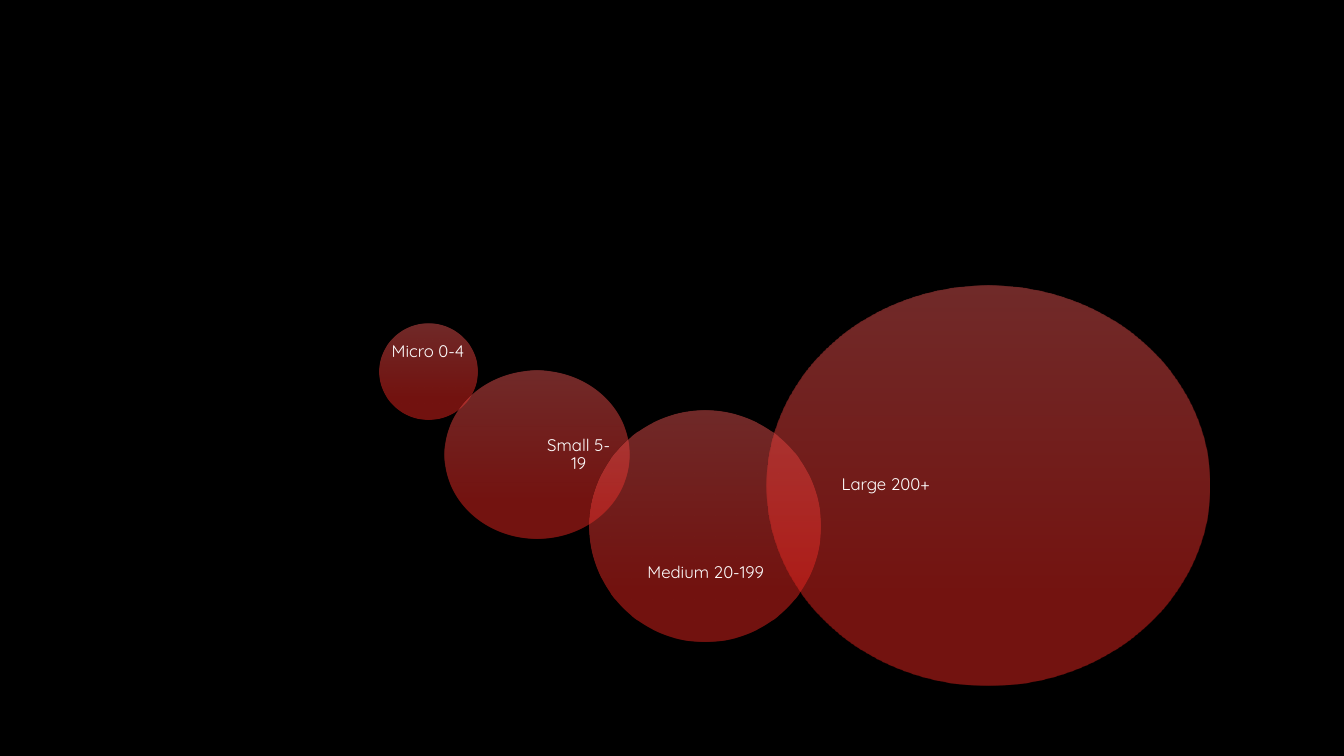
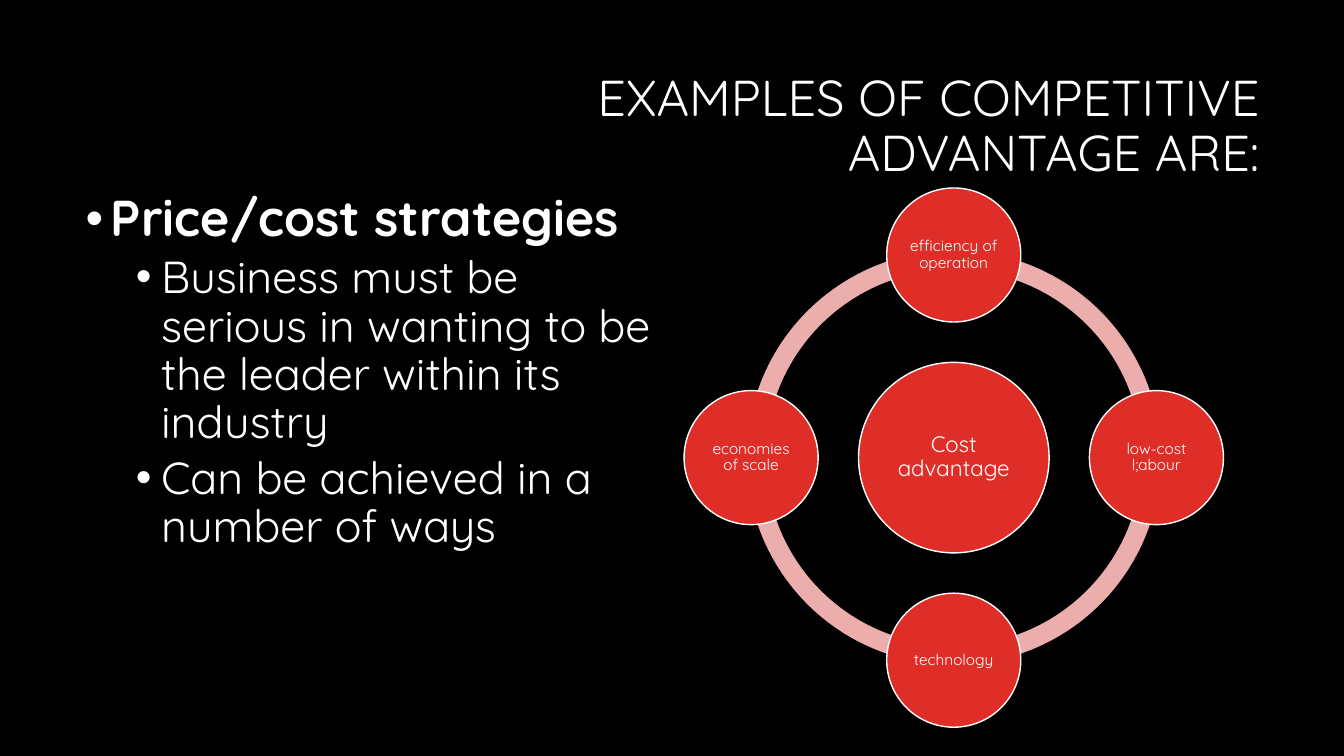
from dataclasses import dataclass
from math import cos, radians, sin

from lxml.etree import SubElement
from pptx import Presentation
from pptx.dml.color import RGBColor
from pptx.enum.shapes import MSO_SHAPE as Preset
from pptx.enum.text import MSO_ANCHOR as Anchor, PP_ALIGN as Align
from pptx.oxml.ns import qn
from pptx.shapes.autoshape import Shape
from pptx.slide import Slide
from pptx.text.text import TextFrame, _Paragraph as Paragraph
from pptx.util import Inches, Pt

FONT = "Quicksand"
COLORS = {
    "background": "000000",
    "text": "FFFFFF",
    "bubble_top": "E25452",
    "bubble_bottom": "E8251F",
    "node": "DF2E28",
    "ring": "ECADAD",
}


@dataclass(frozen=True)
class Box:
    left: float
    top: float
    width: float
    height: float

    def lengths(self) -> tuple:
        return tuple(Inches(v) for v in (self.left, self.top, self.width, self.height))


@dataclass(frozen=True)
class Bubble:
    label: str
    circle: Box
    label_box: Box


@dataclass(frozen=True)
class Bullet:
    text: str
    size: int
    level: int = 0
    bold: bool = False


BUBBLES = [
    Bubble("Micro 0-4", Box(3.76, 3.21, 0.98, 0.95), Box(3.87, 3.34, 0.75, 0.3)),
    Bubble("Small 5-19", Box(4.41, 3.68, 1.83, 1.66), Box(5.39, 3.88, 0.7, 1.27)),
    Bubble("Medium 20-199", Box(5.85, 4.07, 2.29, 2.29), Box(6.12, 5.32, 1.76, 0.73)),
    Bubble("Large 200+", Box(7.6, 2.83, 4.4, 3.97), Box(7.94, 3.29, 1.69, 3.05)),
]
BULLETS = [
    Bullet("Price/cost strategies", 36, bold=True),
    Bullet("Business must be serious in wanting to be the leader within its industry", 32, 1),
    Bullet("Can be achieved in a number of ways", 32, 1),
]
# Clockwise from the top
COST_SOURCES = ["efficiency of operation", "low-cost l;abour", "technology", "economies of scale"]
HUB_X, HUB_Y = 9.46, 4.54
HUB_SIZE, NODE_SIZE, RING_SIZE = 1.89, 1.33, 4.11
ORBIT = 2.01
RING_THICKNESS = 0.046
QUARTER_TURN = 54  # 90 degrees in block arc adjustment units


def color(name: str) -> RGBColor:
    return RGBColor.from_string(COLORS[name])


def add_slide(deck) -> Slide:
    slide = deck.slides.add_slide(deck.slide_layouts[6])
    slide.background.fill.solid()
    slide.background.fill.fore_color.rgb = color("background")
    return slide


def style(paragraph: Paragraph, size: int, align: Align, bold: bool = False) -> None:
    paragraph.alignment = align
    paragraph.line_spacing = 0.9
    font = paragraph.font
    font.name, font.size, font.bold = FONT, Pt(size), bold
    font.color.rgb = color("text")


def write(frame: TextFrame, text: str, size: int, inset: float, align: Align = Align.CENTER) -> None:
    frame.word_wrap = True
    frame.vertical_anchor = Anchor.MIDDLE
    frame.margin_left = frame.margin_right = Inches(inset)
    frame.margin_top = frame.margin_bottom = Inches(inset)
    paragraph = frame.paragraphs[0]
    paragraph.text = text
    style(paragraph, size, align)


def add_plain(slide: Slide, preset: Preset, box: Box) -> Shape:
    shape = slide.shapes.add_shape(preset, *box.lengths())
    shape.shadow.inherit = False
    shape.line.fill.background()
    return shape


def centered(x: float, y: float, size: float) -> Box:
    return Box(x - size / 2, y - size / 2, size, size)


def add_bubble(slide: Slide, bubble: Bubble) -> None:
    circle = add_plain(slide, Preset.OVAL, bubble.circle)
    circle.fill.gradient()
    circle.fill.gradient_angle = 270  # top to bottom
    stops = zip(circle.fill.gradient_stops, ("bubble_top", "bubble_bottom"), (0, 0.78))
    for stop, name, position in stops:
        stop.color.rgb = color(name)
        stop.position = position
    for tint in circle.element.spPr.iter(qn("a:srgbClr")):
        SubElement(tint, qn("a:alpha"), val="50000")
    label = slide.shapes.add_textbox(*bubble.label_box.lengths())
    write(label.text_frame, bubble.label, 12, 0)


def add_ring_quarter(slide: Slide, quarter: int) -> None:
    arc = add_plain(slide, Preset.BLOCK_ARC, centered(HUB_X, HUB_Y, RING_SIZE))
    arc.fill.solid()
    arc.fill.fore_color.rgb = color("ring")
    arc.adjustments[0] = quarter * QUARTER_TURN
    arc.adjustments[1] = (quarter + 1) % 4 * QUARTER_TURN
    arc.adjustments[2] = RING_THICKNESS


def add_node(slide: Slide, text: str, x: float, y: float, diameter: float, size: int) -> None:
    node = add_plain(slide, Preset.OVAL, centered(x, y, diameter))
    node.fill.solid()
    node.fill.fore_color.rgb = color("node")
    node.line.color.rgb = color("text")
    node.line.width = Pt(1)
    write(node.text_frame, text, size, 0.02)


def add_title(slide: Slide, text: str) -> None:
    title = slide.shapes.add_textbox(*Box(3.17, 0.56, 9.42, 1.41).lengths())
    write(title.text_frame, text, 36, 0.1, Align.RIGHT)


def add_bullets(slide: Slide, bullets: list[Bullet]) -> None:
    frame = slide.shapes.add_textbox(*Box(0.75, 1.87, 5.96, 4.4).lengths()).text_frame
    frame.word_wrap = True
    for index, bullet in enumerate(bullets):
        paragraph = frame.add_paragraph() if index else frame.paragraphs[0]
        paragraph.text = bullet.text
        paragraph.level = bullet.level
        properties = paragraph._p.get_or_add_pPr()
        properties.set("marL", str(Inches(0.25 + 0.5 * bullet.level)))
        properties.set("indent", str(Inches(-0.25)))
        SubElement(properties, qn("a:buFont"), typeface="Arial")
        SubElement(properties, qn("a:buChar"), char="•")
        style(paragraph, bullet.size, Align.LEFT, bullet.bold)
        if index:
            paragraph.space_before = Pt(5)


def build_sizes(deck) -> None:
    slide = add_slide(deck)
    for bubble in BUBBLES:
        add_bubble(slide, bubble)


def build_advantage(deck) -> None:
    slide = add_slide(deck)
    add_title(slide, "EXAMPLES OF COMPETITIVE ADVANTAGE ARE:")
    add_bullets(slide, BULLETS)
    # Ring, hub and the nodes around it
    for quarter in range(4):
        add_ring_quarter(slide, quarter)
    add_node(slide, "Cost advantage", HUB_X, HUB_Y, HUB_SIZE, 16)
    for index, source in enumerate(COST_SOURCES):
        angle = radians(90 * index - 90)
        x, y = HUB_X + ORBIT * cos(angle), HUB_Y + ORBIT * sin(angle)
        add_node(slide, source, x, y, NODE_SIZE, 11)


def main() -> None:
    deck = Presentation()
    deck.slide_width, deck.slide_height = Inches(13.33), Inches(7.5)
    build_sizes(deck)
    build_advantage(deck)
    deck.save("out.pptx")


if __name__ == "__main__":
    main()
